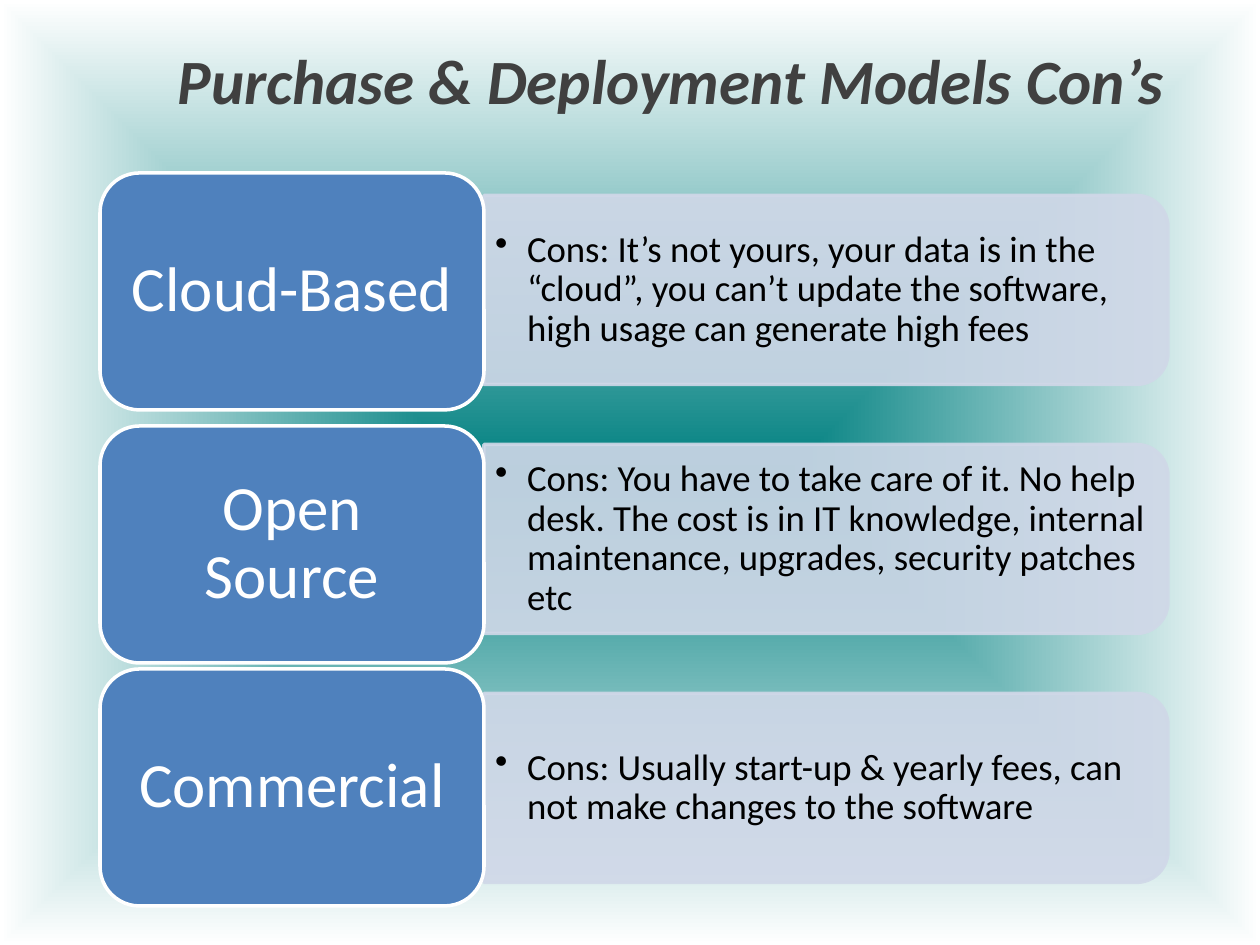
from dataclasses import dataclass

from lxml.etree import SubElement
from pptx import Presentation
from pptx.dml.color import RGBColor
from pptx.enum.shapes import MSO_SHAPE as Preset
from pptx.enum.text import MSO_ANCHOR as Anchor, PP_ALIGN as Align
from pptx.oxml.ns import qn
from pptx.util import Pt

PX = 914400 / 126
FONT = "Calibri"
TEAL, WHITE, BLACK = "008080", "FFFFFF", "000000"
BLUE, PALE_BLUE, GREY = "4F81BD", "D0D8E8", "404040"

HEAD_LEFT, HEAD_WIDTH, HEAD_HEIGHT = 100, 384, 237
PANEL_LEFT, PANEL_WIDTH, PANEL_HEIGHT = 484, 684, 189
FIRST_MIDDLE, PANEL_STEP = 290, 249
CONS_WIDTH, CONS_HEIGHT = 675, 171
BULLET_INDENT = 32


@dataclass
class Model:
    name: str
    cons: str
    head_top: int


MODELS = [
    Model("Cloud-Based",
          "Cons: It’s not yours, your data is in the “cloud”, you can’t update "
          "the software, high usage can generate high fees", 173),
    Model("Open Source",
          "Cons: You have to take care of it. No help desk. The cost is in IT "
          "knowledge, internal maintenance, upgrades, security patches etc", 426),
    Model("Commercial",
          "Cons: Usually start-up & yearly fees, can not make changes to the "
          "software", 669),
]


def emu(px: float) -> int:
    return round(px * PX)


def box(left: float, top: float, width: float, height: float) -> list[int]:
    return [emu(side) for side in (left, top, width, height)]


def rgb(colour: str) -> RGBColor:
    return RGBColor.from_string(colour)


def style_font(font, size: int, colour: str) -> None:
    font.name = FONT
    font.size = Pt(size)
    font.color.rgb = rgb(colour)


def style_shape(shape, fill: str, line: str) -> None:
    shape.shadow.inherit = False
    shape.fill.solid()
    shape.fill.fore_color.rgb = rgb(fill)
    shape.line.color.rgb = rgb(line)
    shape.line.width = Pt(2)


def set_margins(frame, side: int, end: int) -> None:
    frame.margin_left = frame.margin_right = emu(side)
    frame.margin_top = frame.margin_bottom = emu(end)


def paint_background(slide) -> None:
    """Teal in the middle, fading to white at all four edges."""
    fill = slide.background.fill
    fill.gradient()
    for stop, colour, position in zip(fill.gradient_stops, (TEAL, WHITE), (0, 1)):
        stop.color.rgb = rgb(colour)
        stop.position = position
    linear = next(slide.element.iter(qn("a:lin")))
    gradient = linear.getparent()
    gradient.remove(linear)
    shade = SubElement(gradient, qn("a:path"), {"path": "shape"})
    SubElement(shade, qn("a:fillToRect"), {side: "50000" for side in "ltrb"})


def write_title(slide, text: str) -> None:
    title = slide.shapes.title
    title.left, title.top, title.width, title.height = box(165, 0, 1040, 158)
    title.text_frame.text = text
    title.text_frame.vertical_anchor = Anchor.MIDDLE
    heading = title.text_frame.paragraphs[0]
    heading.alignment = Align.LEFT
    style_font(heading.font, 36, GREY)
    heading.font.bold = heading.font.italic = True


def draw_panel(slide, middle: int) -> None:
    """A quarter-turned shape, so that its two round corners face right."""
    left = PANEL_LEFT + (PANEL_WIDTH - PANEL_HEIGHT) / 2
    panel = slide.shapes.add_shape(
        Preset.ROUND_2_SAME_RECTANGLE,
        *box(left, middle - PANEL_WIDTH / 2, PANEL_HEIGHT, PANEL_WIDTH))
    panel.rotation = 90
    style_shape(panel, PALE_BLUE, PALE_BLUE)
    for colour in panel.element.spPr.iter(qn("a:srgbClr")):
        SubElement(colour, qn("a:alpha"), val="90000")


def write_cons(slide, text: str, middle: int) -> None:
    frame = slide.shapes.add_textbox(
        *box(PANEL_LEFT, middle - CONS_HEIGHT / 2, CONS_WIDTH, CONS_HEIGHT)).text_frame
    frame.word_wrap = True
    frame.vertical_anchor = Anchor.MIDDLE
    set_margins(frame, 11, 5)
    frame.text = text
    cons = frame.paragraphs[0]
    cons.line_spacing = 0.9
    style_font(cons.font, 21, BLACK)
    properties = cons._p.get_or_add_pPr()
    properties.set("marL", str(emu(BULLET_INDENT)))
    properties.set("indent", str(-emu(BULLET_INDENT)))
    bullet = properties.makeelement(qn("a:buChar"), {"char": "•"})
    properties.find(qn("a:defRPr")).addprevious(bullet)


def draw_head(slide, model: Model) -> None:
    head = slide.shapes.add_shape(
        Preset.ROUNDED_RECTANGLE,
        *box(HEAD_LEFT, model.head_top, HEAD_WIDTH, HEAD_HEIGHT))
    style_shape(head, BLUE, WHITE)
    frame = head.text_frame
    frame.word_wrap = True
    frame.vertical_anchor = Anchor.MIDDLE
    set_margins(frame, 19, 9)
    frame.text = model.name
    name = frame.paragraphs[0]
    name.alignment = Align.CENTER
    name.line_spacing = 0.9
    style_font(name.font, 36, WHITE)


def main() -> None:
    deck = Presentation()
    deck.slide_width, deck.slide_height = emu(1260), emu(945)
    slide = deck.slides.add_slide(deck.slide_layouts[5])
    paint_background(slide)
    write_title(slide, "Purchase & Deployment Models Con’s")
    for row, model in enumerate(MODELS):
        middle = FIRST_MIDDLE + row * PANEL_STEP
        draw_panel(slide, middle)
        write_cons(slide, model.cons, middle)
        draw_head(slide, model)
    deck.save("out.pptx")


if __name__ == "__main__":
    main()
